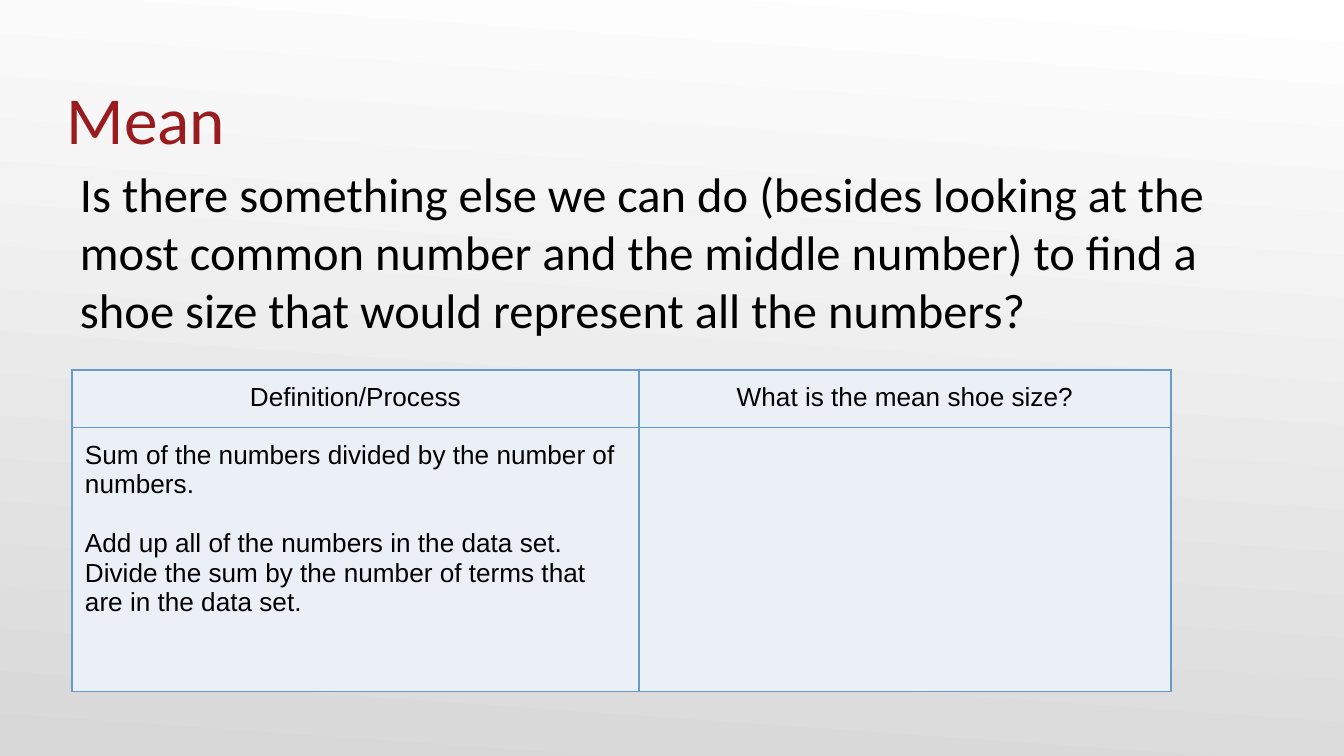
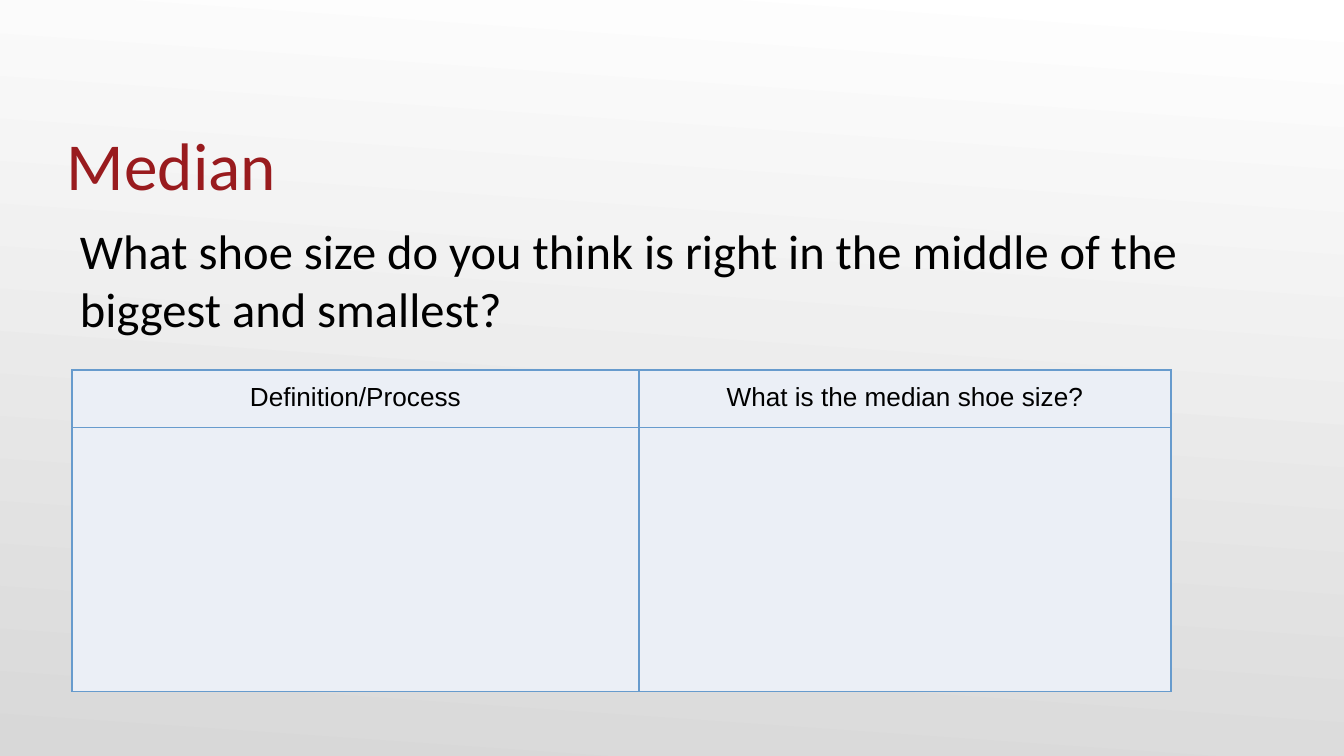
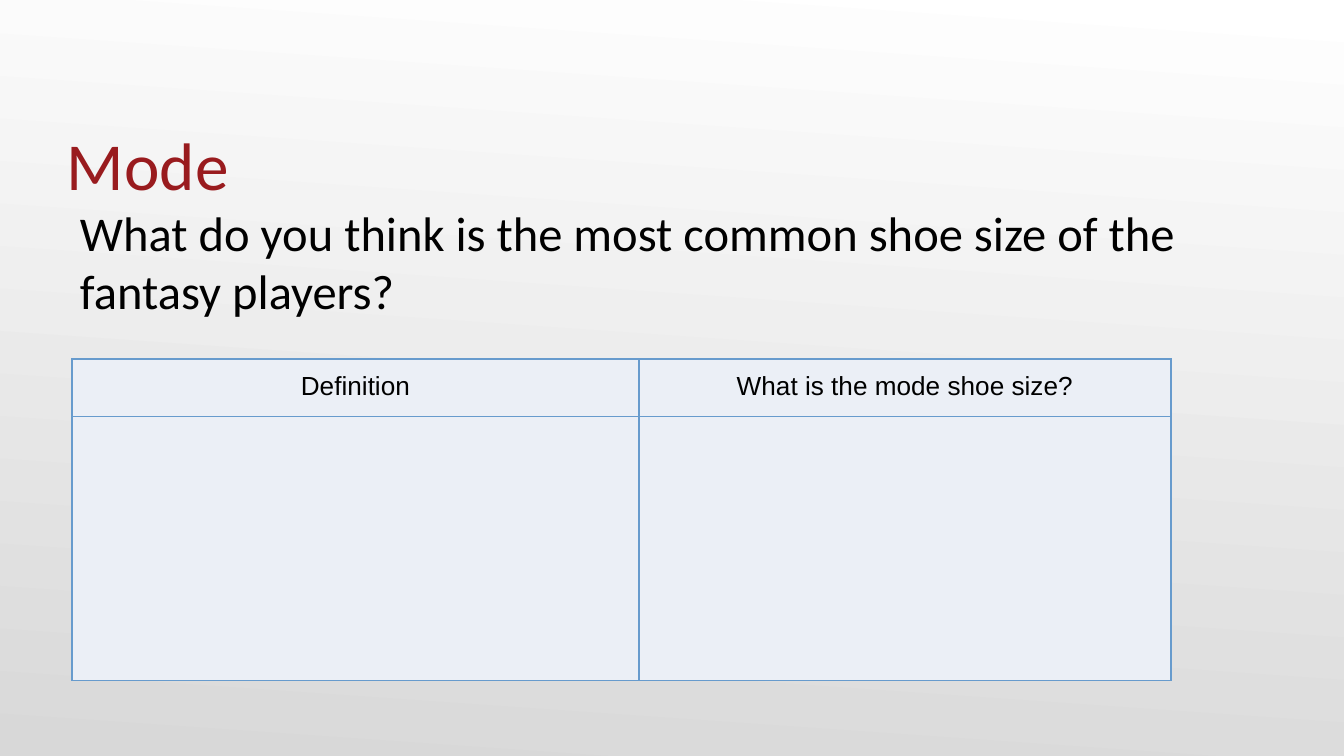
from pptx import Presentation
from pptx.dml.color import RGBColor
from pptx.enum.text import MSO_ANCHOR as Anchor, PP_ALIGN as Align
from pptx.oxml.ns import qn
from pptx.util import Pt
from lxml.etree import SubElement

PX = 914400 / 134.4
WIDTH, HEIGHT = 1344, 756

WHITE = RGBColor(0xFF, 0xFF, 0xFF)
GREY = RGBColor(0xD8, 0xD8, 0xD8)
RED = RGBColor(0x99, 0x1B, 0x1E)
BLACK = RGBColor(0x00, 0x00, 0x00)
PALE_BLUE = RGBColor(0xEB, 0xEF, 0xF6)
BORDER_BLUE = RGBColor(0x67, 0x9B, 0xCD)

LESSONS = [
    {
        "title": ("Mean", 32),
        "question": ("Is there something else we can do (besides looking at the most common "
                     "number and the middle number) to find a shoe size that would represent "
                     "all the numbers?", 157, 484),
        "table_top": 370,
        "headings": ["Definition/Process", "What is the mean shoe size?"],
        "answers": [["Sum of the numbers divided by the number of numbers.",
                     "Add up all of the numbers in the data set. Divide the sum by the "
                     "number of terms that are in the data set."], []],
    },
    {
        "title": ("Median", 78),
        "question": ("What shoe size do you think is right in the middle of the biggest "
                     "and smallest?", 214, 484),
        "table_top": 370,
        "headings": ["Definition/Process", "What is the median shoe size?"],
        "answers": [[], []],
    },
    {
        "title": ("Mode", 78),
        "question": ("What do you think is the most common shoe size of the fantasy players?",
                     196, 501),
        "table_top": 359,
        "headings": ["Definition", "What is the mode shoe size?"],
        "answers": [[], []],
    },
]

TEXT_LEFT, TEXT_WIDTH, TITLE_HEIGHT = 67, 1210, 126
TABLE_LEFT = 72
COLUMNS = [567, 532]
ROWS = [56, 264]
CELL_MARGIN = 13


def px(length):
    return round(length * PX)


def write(frame, paragraphs, size, font="Calibri", color=BLACK, align=Align.LEFT, gap=0):
    """Fill a text frame, with gap points between its paragraphs."""
    for index, text in enumerate(paragraphs):
        para = frame.add_paragraph() if index else frame.paragraphs[0]
        para.alignment = align
        para.space_before = Pt(gap if index else 0)
        span = para.add_run()
        span.text = text
        span.font.name = font
        span.font.size = Pt(size)
        span.font.color.rgb = color


def add_text(page, text, top, height, margins, anchor=Anchor.TOP, **style):
    box = page.shapes.add_textbox(px(TEXT_LEFT), px(top), px(TEXT_WIDTH), px(height))
    frame = box.text_frame
    frame.word_wrap = True
    frame.vertical_anchor = anchor
    (frame.margin_left, frame.margin_top,
     frame.margin_right, frame.margin_bottom) = map(px, margins)
    write(frame, [text], **style)


def add_borders(cell):
    properties = cell._tc.get_or_add_tcPr()
    for place, side in enumerate(("a:lnL", "a:lnR", "a:lnT", "a:lnB")):
        line = SubElement(properties, qn(side), w=str(Pt(1)))
        fill = SubElement(line, qn("a:solidFill"))
        SubElement(fill, qn("a:srgbClr"), val=str(BORDER_BLUE))
        properties.insert(place, line)


def add_answer_table(page, top, headings, answers):
    table = page.shapes.add_table(len(ROWS), len(COLUMNS), px(TABLE_LEFT), px(top),
                                  px(sum(COLUMNS)), px(sum(ROWS))).table
    table.first_row = table.horz_banding = False
    for column, width in zip(table.columns, COLUMNS):
        column.width = px(width)
    contents = [[[heading] for heading in headings], answers]
    for row, height, texts, align in zip(table.rows, ROWS, contents, (Align.CENTER, Align.LEFT)):
        row.height = px(height)
        for cell, paragraphs in zip(row.cells, texts):
            cell.fill.solid()
            cell.fill.fore_color.rgb = PALE_BLUE
            cell.margin_left = cell.margin_right = px(CELL_MARGIN)
            cell.margin_top = cell.margin_bottom = px(CELL_MARGIN)
            add_borders(cell)
            write(cell.text_frame, paragraphs, size=14, font="Arial", align=align, gap=16)


def set_background(master):
    fill = master.background.fill
    fill.gradient()
    fill.gradient_angle = 266
    for stop, color in zip(fill.gradient_stops, (WHITE, GREY)):
        stop.color.rgb = color


def main():
    deck = Presentation()
    deck.slide_width, deck.slide_height = px(WIDTH), px(HEIGHT)
    set_background(deck.slide_master)
    for lesson in LESSONS:
        page = deck.slides.add_slide(deck.slide_layouts[6])
        title, title_top = lesson["title"]
        add_text(page, title, title_top, TITLE_HEIGHT, (0, 7, 0, 0),
                 anchor=Anchor.BOTTOM, size=36, color=RED)
        question, top, height = lesson["question"]
        add_text(page, question, top, height, (13, 7, 13, 7), size=26)
        add_answer_table(page, lesson["table_top"], lesson["headings"], lesson["answers"])
    deck.save("out.pptx")


if __name__ == "__main__":
    main()
